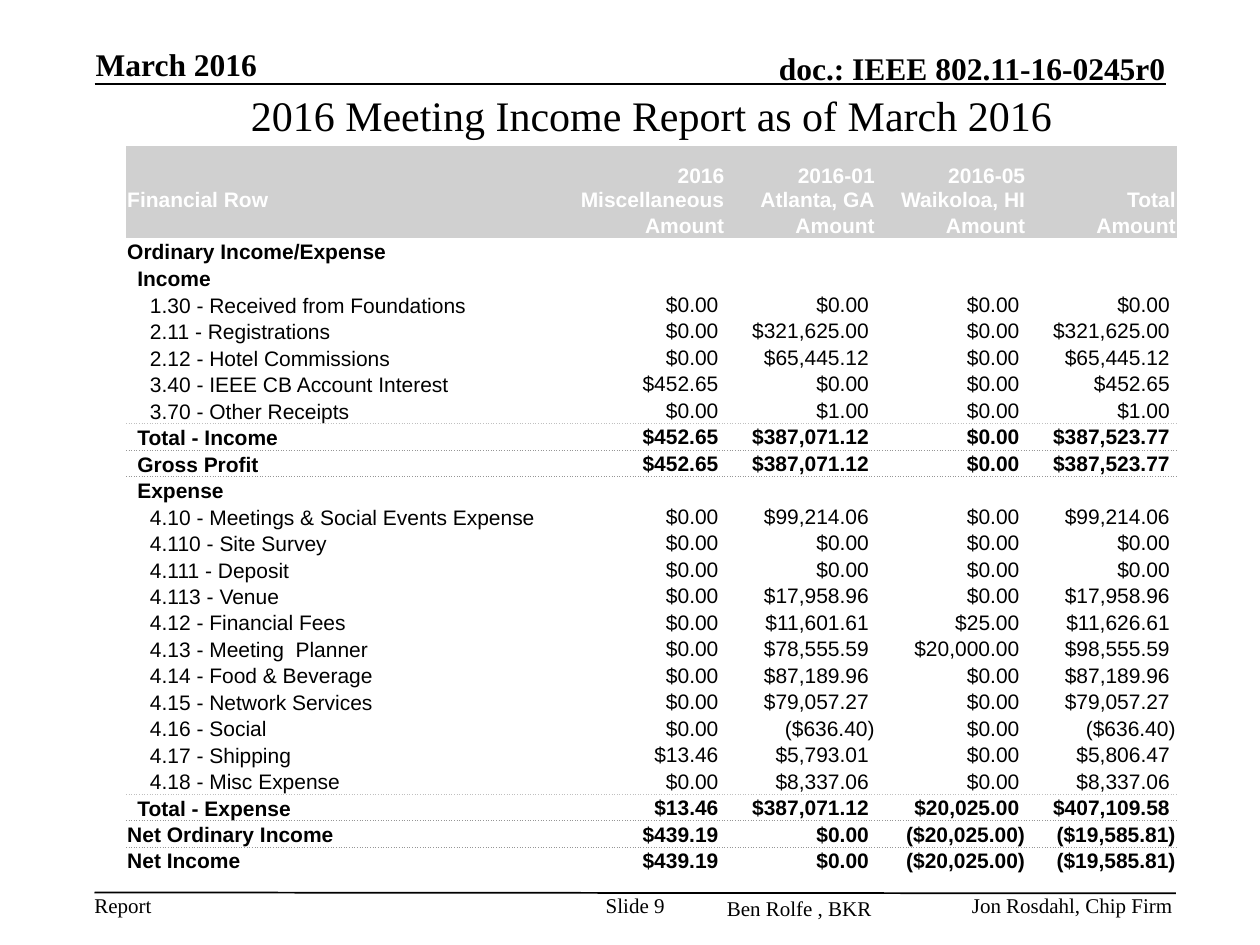
from lxml.etree import SubElement
from pptx import Presentation
from pptx.dml.color import RGBColor
from pptx.enum.shapes import MSO_CONNECTOR as Connector
from pptx.enum.text import MSO_ANCHOR as Anchor, MSO_AUTO_SIZE as AutoSize, PP_ALIGN as Align
from pptx.oxml.ns import qn
from pptx.util import Pt

BLACK = RGBColor(0x00, 0x00, 0x00)
WHITE = RGBColor(0xFF, 0xFF, 0xFF)
HEADER_GRAY = RGBColor(0xD0, 0xD0, 0xD0)
LIGHT_RULE = RGBColor(0xC0, 0xC0, 0xC0)
DARK_RULE = RGBColor(0x96, 0x96, 0x96)

SERIF, SANS = "Times New Roman", "Arial"
NO_STYLE = "{2D5ABB26-0587-4C30-8999-92F81FD0307C}"
COLUMN_WIDTHS = (249, 93.6, 86, 86, 86)
HEADER_HEIGHT = 37.4
CELL_INSET = 0.72
LABEL_INSETS = (CELL_INSET, 6.5, 13.7)

HEADINGS = (
    ("Financial Row", "2016 Miscellaneous", "2016-01 Atlanta, GA", "2016-05 Waikoloa, HI", "Total"),
    ("", "Amount", "Amount", "Amount", "Amount"),
)
ROWS = (
    (0, "Ordinary Income/Expense", ()),
    (1, "Income", ()),
    (2, "1.30 - Received from Foundations", (0, 0, 0)),
    (2, "2.11 - Registrations", (0, 321625, 0)),
    (2, "2.12 - Hotel Commissions", (0, 65445.12, 0)),
    (2, "3.40 - IEEE CB Account Interest", (452.65, 0, 0)),
    (2, "3.70 - Other Receipts", (0, 1, 0)),
    (1, "Total - Income", (452.65, 387071.12, 0)),
    (1, "Gross Profit", (452.65, 387071.12, 0)),
    (1, "Expense", ()),
    (2, "4.10 - Meetings & Social Events Expense", (0, 99214.06, 0)),
    (2, "4.110 - Site Survey", (0, 0, 0)),
    (2, "4.111 - Deposit", (0, 0, 0)),
    (2, "4.113 - Venue", (0, 17958.96, 0)),
    (2, "4.12 - Financial Fees", (0, 11601.61, 25)),
    (2, "4.13 - Meeting  Planner", (0, 78555.59, 20000)),
    (2, "4.14 - Food & Beverage", (0, 87189.96, 0)),
    (2, "4.15 - Network Services", (0, 79057.27, 0)),
    (2, "4.16 - Social", (0, -636.40, 0)),
    (2, "4.17 - Shipping", (13.46, 5793.01, 0)),
    (2, "4.18 - Misc Expense", (0, 8337.06, 0)),
    (1, "Total - Expense", (13.46, 387071.12, 20025)),
    (0, "Net Ordinary Income", (439.19, 0, -20025)),
    (0, "Net Income", (439.19, 0, -20025)),
)
RULES_ABOVE = {
    "Total - Income": LIGHT_RULE,
    "Gross Profit": DARK_RULE,
    "Total - Expense": LIGHT_RULE,
    "Net Ordinary Income": DARK_RULE,
    "Net Income": DARK_RULE,
}


def write_text(frame, text, size=12, font=SERIF, color=BLACK, bold=False, align=Align.LEFT):
    """Write one formatted paragraph into a text frame."""
    para = frame.paragraphs[0]
    para.alignment = align
    if not text:
        SubElement(para._p, qn("a:endParaRPr"), sz=str(size * 100))
        return
    span = para.add_run()
    span.text = text
    span.font.size = Pt(size)
    span.font.name = font
    span.font.bold = bold
    span.font.color.rgb = color


def add_label(page, text, left, top, width, height, anchor=Anchor.TOP, wrap=True, **style):
    """Add a text box without insets."""
    box = page.shapes.add_textbox(Pt(left), Pt(top), Pt(width), Pt(height))
    frame = box.text_frame
    frame.margin_left = frame.margin_right = frame.margin_top = frame.margin_bottom = 0
    frame.vertical_anchor = anchor
    frame.word_wrap = wrap
    write_text(frame, text, **style)


def add_rule(page, left, top, width, drop=0):
    """Add a thin black line across the page."""
    line = page.shapes.add_connector(
        Connector.STRAIGHT, Pt(left), Pt(top), Pt(left + width), Pt(top + drop))
    line.line.color.rgb = BLACK
    line.line.width = Pt(1)
    SubElement(line._element.spPr, qn("a:effectLst"))


def add_header(page, left, top, width):
    """Place the date, the document number and the line below them."""
    heading = dict(size=18, bold=True, anchor=Anchor.BOTTOM)
    add_rule(page, left, top + 22.2, width)
    add_label(page, "doc.: IEEE 802.11-16-0245r0", left + width - 384, top + 2, 384, 21.6,
              align=Align.RIGHT, **heading)
    add_label(page, "March 2016", left + 0.7, top, 147.6, 21.6, **heading)


def add_footer(page, left, top, width):
    """Place the footer line and the four texts below it."""
    add_rule(page, left, top, width, drop=0.5)
    add_label(page, "Report", left, top, 33, 14.4, wrap=False)
    add_label(page, "Slide 9", left + 288, top, 42, 28.8, align=Align.CENTER)
    add_label(page, "Ben Rolfe , BKR", left + 354, top + 1.6, 90, 14.4, align=Align.RIGHT)
    add_label(page, "Jon Rosdahl, Chip Firm ", left + 462, top, 157, 14.4, align=Align.RIGHT)


def set_title(page, text, left, top, width, height):
    """Move and format the title placeholder."""
    title = page.shapes.title
    title.left, title.top, title.width, title.height = Pt(left), Pt(top), Pt(width), Pt(height)
    frame = title.text_frame
    frame.auto_size = AutoSize.NONE
    frame.word_wrap = True
    frame.vertical_anchor = Anchor.TOP
    write_text(frame, text, size=24, align=Align.CENTER)


def money(amount):
    """Format an amount, with negative values in brackets."""
    return f"(${-amount:,.2f})" if amount < 0 else f"${amount:,.2f} "


def fill_cell(cell, text, fill=None, inset=CELL_INSET, anchor=Anchor.MIDDLE, **style):
    """Write one table cell and set its fill and insets."""
    cell.margin_left = Pt(inset)
    cell.margin_right = cell.margin_top = Pt(CELL_INSET)
    cell.margin_bottom = 0
    cell.vertical_anchor = anchor
    if fill:
        cell.fill.solid()
        cell.fill.fore_color.rgb = fill
    else:
        cell.fill.background()
    write_text(cell.text_frame, text, font=SANS, **style)


def add_border(cell, side, color):
    """Add a dotted border to one side of a cell, ahead of its fill."""
    properties = cell._tc.get_or_add_tcPr()
    line = SubElement(properties, qn(f"a:{side}"), w=str(Pt(0.5)))
    solid = SubElement(line, qn("a:solidFill"))
    SubElement(solid, qn("a:srgbClr"), val=str(color))
    SubElement(line, qn("a:prstDash"), val="dot")
    properties.insert(1 if properties[0].tag == qn("a:lnT") else 0, line)


def add_income_table(page, left, top, height):
    """Build the income report table."""
    row_count = len(HEADINGS) + len(ROWS)
    frame = page.shapes.add_table(row_count, len(COLUMN_WIDTHS), Pt(left), Pt(top),
                                  Pt(sum(COLUMN_WIDTHS)), Pt(height))
    table = frame.table
    table.first_row = table.horz_banding = False
    table._tbl.tblPr.find(qn("a:tableStyleId")).text = NO_STYLE
    for column, width in zip(table.columns, COLUMN_WIDTHS):
        column.width = Pt(width)
    for index, row in enumerate(table.rows):
        row.height = Pt((height - HEADER_HEIGHT) / (row_count - 1) if index else HEADER_HEIGHT)

    for index, headings in enumerate(HEADINGS):
        for column, text in enumerate(headings):
            fill_cell(table.cell(index, column), text, fill=HEADER_GRAY, anchor=Anchor.BOTTOM,
                      color=WHITE, bold=True, align=Align.RIGHT if column else Align.LEFT)

    for index, (level, label, amounts) in enumerate(ROWS, len(HEADINGS)):
        bold = level < 2
        fill_cell(table.cell(index, 0), label, inset=LABEL_INSETS[level], bold=bold,
                  anchor=Anchor.BOTTOM if level else Anchor.MIDDLE)
        texts = [money(amount) for amount in (*amounts, sum(amounts))] if amounts else [""] * 4
        for column, text in enumerate(texts, 1):
            fill_cell(table.cell(index, column), text, bold=bold, align=Align.RIGHT)
        if label in RULES_ABOVE:
            for column in range(len(COLUMN_WIDTHS)):
                add_border(table.cell(index - 1, column), "lnB", RULES_ABOVE[label])
                add_border(table.cell(index, column), "lnT", RULES_ABOVE[label])


def main():
    """Build the deck and save it."""
    deck = Presentation()
    deck.slide_width, deck.slide_height = Pt(720), Pt(540)
    page = deck.slides.add_slide(deck.slide_layouts[5])
    add_header(page, 54, 26, 612)
    add_footer(page, 54, 510, 618)
    set_title(page, "2016 Meeting Income Report as of March 2016", 72, 47.5, 600.5, 36)
    add_income_table(page, 72, 83.5, 416.2)
    deck.save("out.pptx")


if __name__ == "__main__":
    main()
